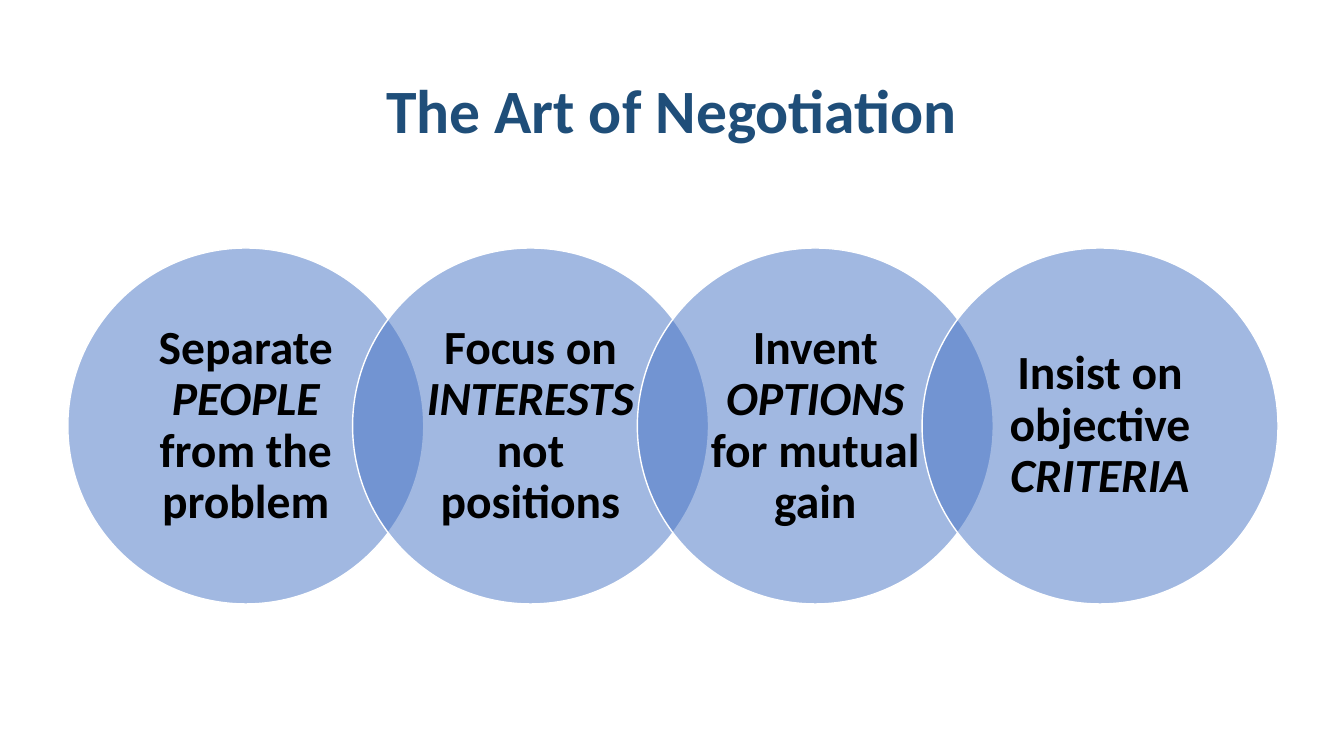
from dataclasses import dataclass

from lxml.etree import SubElement
from pptx import Presentation
from pptx.dml.color import RGBColor
from pptx.enum.shapes import MSO_SHAPE as Shape
from pptx.enum.text import MSO_ANCHOR as Anchor, MSO_AUTO_SIZE as AutoSize, PP_ALIGN as Align
from pptx.oxml.ns import qn
from pptx.slide import Slide
from pptx.text.text import TextFrame, _Paragraph as Paragraph
from pptx.util import Cm, Pt


@dataclass(frozen=True)
class Theme:
    font: str = "Calibri"
    title_color: str = "1F4E79"
    text_color: str = "000000"
    circle_color: str = "4472C4"
    outline_color: str = "FFFFFF"
    title_size: int = 44
    text_size: int = 34
    circle_opacity: int = 50


@dataclass(frozen=True)
class Principle:
    lead: str
    keyword: str
    rest: str = ""


THEME = Theme()
PRINCIPLES = [
    Principle("Separate ", "PEOPLE", " from the problem"),
    Principle("Focus on ", "INTERESTS ", "not positions"),
    Principle("Invent ", "OPTIONS", " for mutual gain"),
    Principle("Insist on objective ", "CRITERIA"),
]

# Circle chain, in centimetres: each circle overlaps the last by a fifth
LEFT, TOP, DIAMETER = 1.71, 6.25, 8.97
PITCH = DIAMETER * 0.8


def add_text(p: Paragraph, text: str, *, size: int, color: str,
             bold: bool = True, italic: bool = False) -> None:
    r = p.add_run()
    r.text = text
    r.font.name = THEME.font
    r.font.size = Pt(size)
    r.font.bold = bold
    r.font.italic = italic
    r.font.color.rgb = RGBColor.from_string(color)


def center_text(tf: TextFrame) -> Paragraph:
    tf.word_wrap = True
    tf.auto_size = AutoSize.NONE
    tf.vertical_anchor = Anchor.MIDDLE
    p = tf.paragraphs[0]
    p.alignment = Align.CENTER
    p.line_spacing = 0.9
    return p


def add_title(s: Slide, text: str) -> None:
    sp = s.shapes.title
    sp.left, sp.top, sp.width, sp.height = Cm(2.33), Cm(1.01), Cm(29.21), Cm(3.68)
    p = center_text(sp.text_frame)
    add_text(p, text, size=THEME.title_size, color=THEME.title_color)


def add_circle(s: Slide, index: int, principle: Principle) -> None:
    sp = s.shapes.add_shape(Shape.OVAL, Cm(LEFT + index * PITCH), Cm(TOP),
                            Cm(DIAMETER), Cm(DIAMETER))
    sp.shadow.inherit = False
    sp.fill.solid()
    sp.fill.fore_color.rgb = RGBColor.from_string(THEME.circle_color)
    color = sp.fill._xPr.find(qn("a:solidFill"))[0]
    SubElement(color, qn("a:alpha"), val=str(THEME.circle_opacity * 1000))
    sp.line.color.rgb = RGBColor.from_string(THEME.outline_color)
    sp.line.width = Pt(1)

    # Label with the keyword in italics
    tf = sp.text_frame
    tf.margin_left = tf.margin_right = Cm(0.48)
    tf.margin_top = tf.margin_bottom = Cm(0.13)
    p = center_text(tf)
    for text in (principle.lead, principle.keyword, principle.rest):
        if text:
            add_text(p, text, size=THEME.text_size, color=THEME.text_color,
                     italic=text == principle.keyword)


def main() -> None:
    prs = Presentation()
    prs.slide_width, prs.slide_height = Cm(33.87), Cm(19.05)
    s = prs.slides.add_slide(prs.slide_layouts[5])
    add_title(s, "The Art of Negotiation")
    for index, principle in enumerate(PRINCIPLES):
        add_circle(s, index, principle)
    prs.save("out.pptx")


if __name__ == "__main__":
    main()
